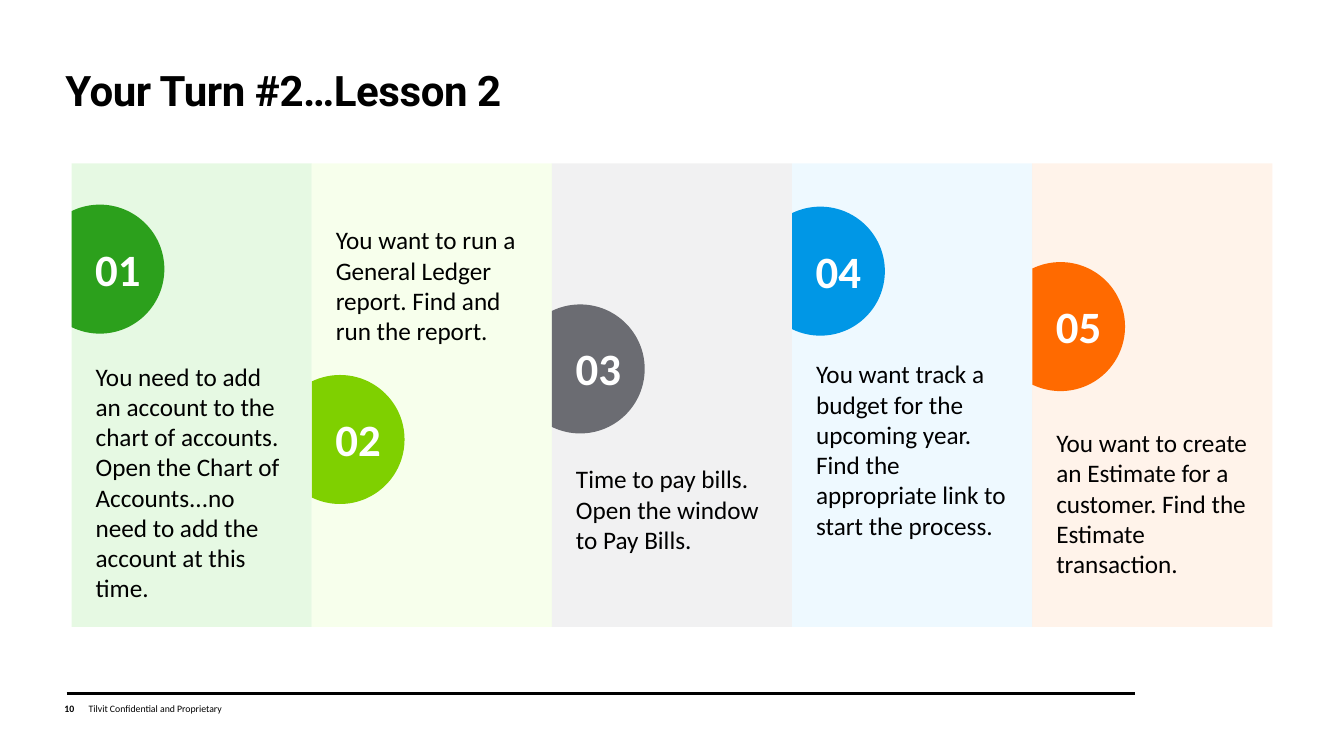
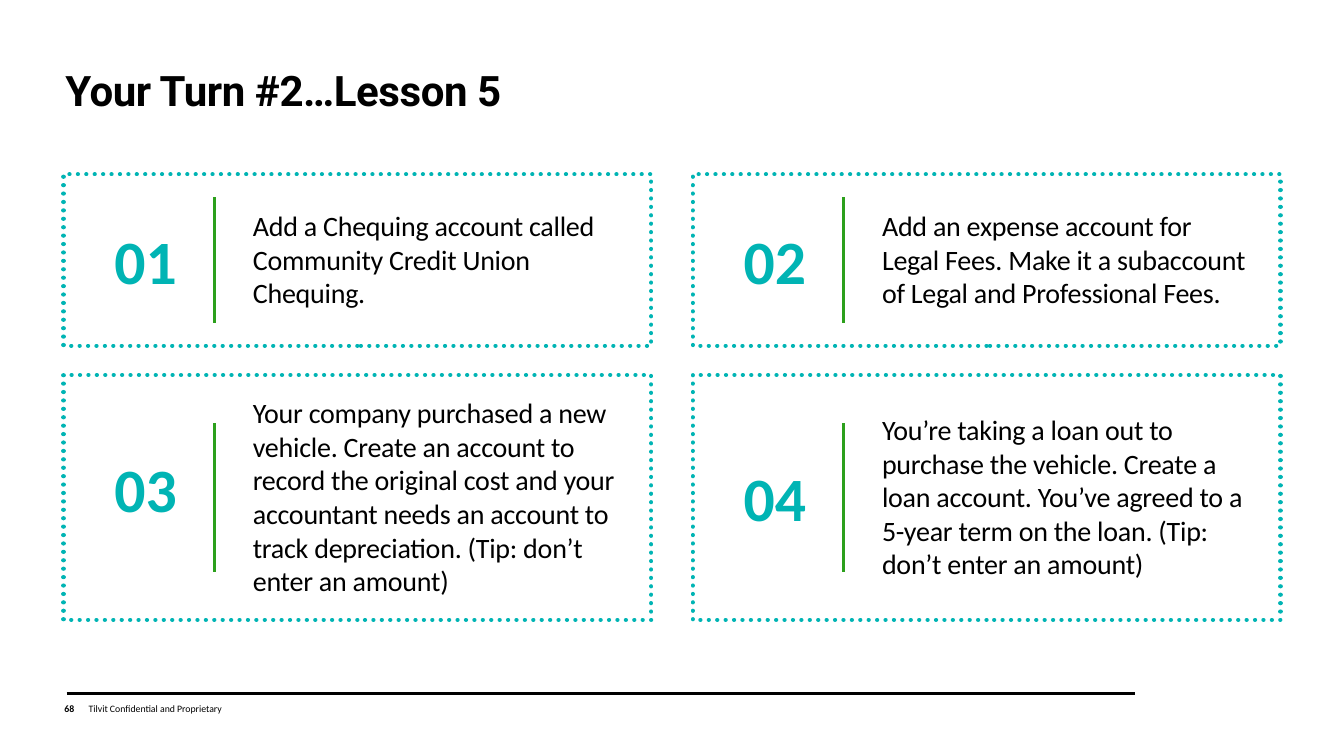
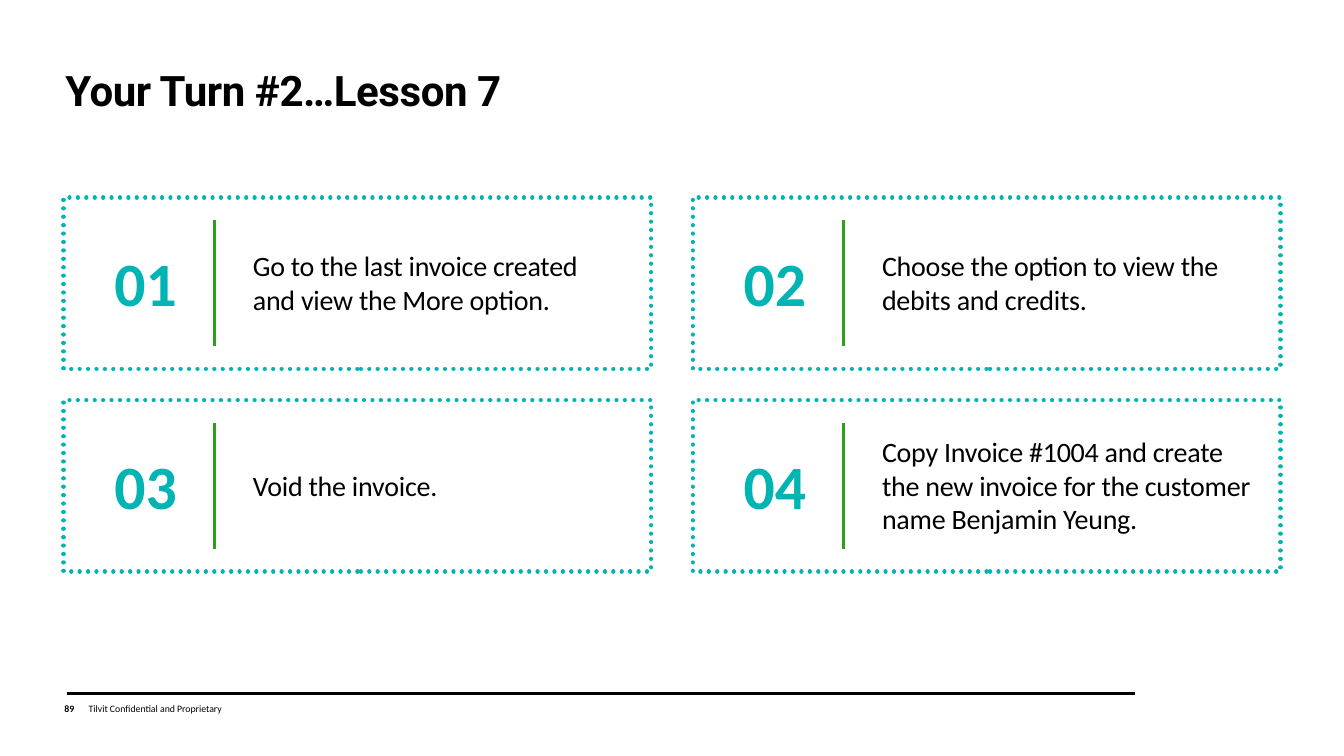
import math

from lxml import etree
from pptx import Presentation
from pptx.dml.color import RGBColor
from pptx.enum.dml import MSO_LINE
from pptx.enum.shapes import MSO_CONNECTOR, MSO_SHAPE
from pptx.enum.text import MSO_ANCHOR, PP_ALIGN
from pptx.oxml.ns import qn
from pptx.util import Inches, Pt

RECTANGLE = MSO_SHAPE.RECTANGLE
STRAIGHT = MSO_CONNECTOR.STRAIGHT
DOTTED = MSO_LINE.ROUND_DOT
MIDDLE, BOTTOM = MSO_ANCHOR.MIDDLE, MSO_ANCHOR.BOTTOM
LEFT, CENTER = PP_ALIGN.LEFT, PP_ALIGN.CENTER

COLORS = {
    "black": "000000", "white": "FFFFFF", "teal": "00B4B4", "green": "2CA01C",
    "lime": "7FD000", "gray": "6B6C72", "blue": "0097E6", "orange": "FF6A00",
    "pale green": "CEF5C8", "pale lime": "E7FFC3", "pale gray": "E1E1E3",
    "pale blue": "C7ECFF", "pale orange": "FFE1CC",
}
RGB = {name: RGBColor.from_string(value) for name, value in COLORS.items()}


def add_text(slide, text, left, middle, width, size, lines=1, color="black", bold=False,
             align=LEFT, anchor=MIDDLE, font="Calibri", tracking=0, inset=0.1, leading=None):
    """Add a text box as tall as its lines, centred on the height `middle`."""
    height = size * 1.21 / 72 * lines + 0.1
    box = slide.shapes.add_textbox(Inches(left), Inches(middle - height / 2),
                                   Inches(width), Inches(height))
    frame = box.text_frame
    frame.word_wrap = True
    frame.vertical_anchor = anchor
    frame.margin_left = frame.margin_right = Inches(inset)
    frame.text = text
    paragraph = frame.paragraphs[0]
    paragraph.alignment = align
    if leading:
        paragraph.line_spacing = leading
    run = paragraph.runs[0]
    run.font.name = font
    run.font.size = Pt(size)
    run.font.bold = bold
    run.font.color.rgb = RGB[color]
    if tracking:
        run.font._element.set("spc", str(round(tracking * 100)))


def add_rule(slide, x1, y1, x2, y2, color, weight):
    rule = slide.shapes.add_connector(STRAIGHT, Inches(x1), Inches(y1), Inches(x2), Inches(y2))
    rule.line.color.rgb = RGB[color]
    rule.line.width = Pt(weight)
    etree.SubElement(rule._element.spPr, qn("a:effectLst"))


deck = Presentation()
deck.slide_width, deck.slide_height = Inches(13.33), Inches(7.5)

# Shared title and footer
lessons = []
for lesson, page in [(2, 10), (5, 68), (7, 89)]:
    slide = deck.slides.add_slide(deck.slide_layouts[6])
    add_rule(slide, 0.66, 6.88, 11.26, 6.88, "black", 1.5)
    add_text(slide, str(page), 0.54, 7.03, 0.39, 7, bold=True)
    add_text(slide, "Tilvit Confidential and Proprietary", 0.88, 7.03, 2.67, 7, inset=0)
    add_text(slide, f"Your Turn #2…Lesson {lesson}", 0.55, 0.9, 12.15, 30, bold=True,
             anchor=BOTTOM, font="Roboto", tracking=-0.3, leading=0.95)
    lessons.append(slide)

# Lesson 2: five columns, each with a disc cut off at the column's left edge
# Hue, opacity in percent, disc middle, text middle, text lines, text
columns = [
    ("green", 50, 2.67, 4.78, 8, "You need to add an account to the chart of accounts. Open the "
     "Chart of Accounts...no need to add the account at this time."),
    ("lime", 30, 4.36, 2.83, 4, "You want to run a General Ledger report. Find and run the report."),
    ("gray", 44, 3.66, 5.05, 3, "Time to pay bills. Open the window to Pay Bills."),
    ("blue", 30, 2.69, 4.46, 6, "You want track a budget for the upcoming year. Find the "
     "appropriate link to start the process."),
    ("orange", 40, 3.24, 4.99, 5, "You want to create an Estimate for a customer. Find the "
     "Estimate transaction."),
]
COLUMNS_LEFT, COLUMNS_RIGHT = 0.71, 12.62
column_width = (COLUMNS_RIGHT - COLUMNS_LEFT) / len(columns)
DISC_RADIUS, DISC_OFFSET = 0.64, 0.28

# Bezier points of the cut disc around its centre: a start, then two handles and an end per arc
cut_angle = math.acos(-DISC_OFFSET / DISC_RADIUS)
angles = [-cut_angle, -math.pi / 2, 0, math.pi / 2, cut_angle]
disc_points = [(math.cos(-cut_angle), math.sin(-cut_angle))]
for start, end in zip(angles, angles[1:]):
    handle = 4 / 3 * math.tan((end - start) / 4)
    disc_points += [
        (math.cos(start) - handle * math.sin(start), math.sin(start) + handle * math.cos(start)),
        (math.cos(end) + handle * math.sin(end), math.sin(end) - handle * math.cos(end)),
        (math.cos(end), math.sin(end)),
    ]

for index, (hue, opacity, disc_middle, text_middle, lines, text) in enumerate(columns):
    slide = lessons[0]
    left = COLUMNS_LEFT + index * column_width
    column = slide.shapes.add_shape(RECTANGLE, Inches(left), Inches(1.62),
                                    Inches(column_width), Inches(4.6))
    column.fill.solid()
    column.fill.fore_color.rgb = RGB["pale " + hue]
    tint = column._element.spPr.find(".//" + qn("a:srgbClr"))
    etree.SubElement(tint, qn("a:alpha")).set("val", str(opacity * 1000))

    outline = [(Inches(left + DISC_OFFSET + DISC_RADIUS * x),
                Inches(disc_middle + DISC_RADIUS * y)) for x, y in disc_points]
    builder = slide.shapes.build_freeform(*outline[0])
    builder.add_line_segments(outline[1:], close=True)
    disc = builder.convert_to_shape()
    # Merge each three line segments into one curve
    segments = disc._element.findall(".//" + qn("a:lnTo"))
    for first, second, third in zip(segments[::3], segments[1::3], segments[2::3]):
        first.tag = qn("a:cubicBezTo")
        for segment in (second, third):
            first.append(segment[0])
            segment.getparent().remove(segment)
    disc.fill.solid()
    disc.fill.fore_color.rgb = RGB[hue]
    for part in (column, disc):
        part.line.fill.background()
        part.shadow.inherit = False

    add_text(slide, f"{index + 1:02}", left, disc_middle - 0.01, DISC_OFFSET + DISC_RADIUS, 32,
             color="white", bold=True, align=CENTER)
    add_text(slide, text, left + 0.14, text_middle, 2.11, 18, lines)

# Lessons 5 and 7: rows of two dotted cards
# Slide, top, height, rule length, cards as (number middle, text lines, text)
card_rows = [
    (lessons[1], 1.73, 1.7, 1.25, [
        (2.58, 3, "Add a Chequing account called Community Credit Union Chequing."),
        (2.58, 3, "Add an expense account for Legal Fees. Make it a subaccount of Legal and "
         "Professional Fees.")]),
    (lessons[1], 3.72, 2.43, 1.47, [
        (4.84, 6, "Your company purchased a new vehicle. Create an account to record the original "
         "cost and your accountant needs an account to track depreciation. "
         "(Tip: don’t enter an amount)"),
        (4.93, 5, "You’re taking a loan out to purchase the vehicle. Create a loan account. You’ve "
         "agreed to a 5-year term on the loan. (Tip: don’t enter an amount)")]),
    (lessons[2], 1.96, 1.7, 1.25, [
        (2.8, 2, "Go to the last invoice created and view the More option."),
        (2.8, 2, "Choose the option to view the debits and credits.")]),
    (lessons[2], 3.97, 1.7, 1.25, [
        (4.81, 1, "Void the invoice."),
        (4.81, 3, "Copy Invoice #1004 and create the new invoice for the customer name "
         "Benjamin Yeung.")]),
]
for row, (slide, top, height, rule_length, cards) in enumerate(card_rows):
    middle = top + height / 2
    for column, (number_middle, lines, text) in enumerate(cards):
        left = 0.63 + column * 6.24
        number = row % 2 * 2 + column + 1
        card = slide.shapes.add_shape(RECTANGLE, Inches(left), Inches(top),
                                      Inches(5.83), Inches(height))
        card.shadow.inherit = False
        card.fill.solid()
        card.fill.fore_color.rgb = RGB["white"]
        card.line.color.rgb = RGB["teal"]
        card.line.width = Pt(3)
        card.line.dash_style = DOTTED
        card._element.spPr.find(qn("a:ln")).set("cap", "rnd")
        add_text(slide, f"{number:02}", left + 0.27, number_middle, 1.09, 44,
                 color="teal", bold=True, align=CENTER)
        add_rule(slide, left + 1.5, middle - rule_length / 2,
                 left + 1.5, middle + rule_length / 2, "green", 2)
        add_text(slide, text, left + 1.78, middle - 0.01, 3.87, 20, lines, tracking=-0.2)

deck.save("out.pptx")
